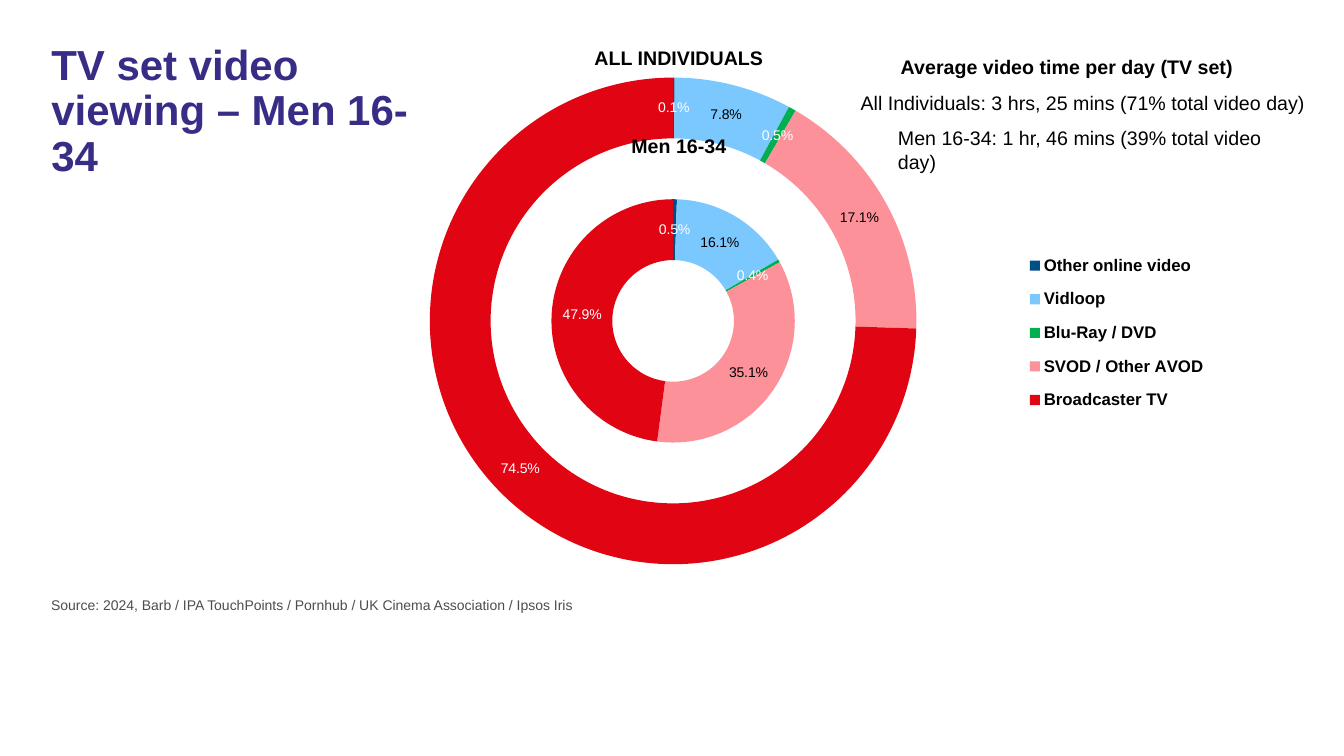
from lxml.etree import SubElement
from pptx import Presentation
from pptx.chart.data import CategoryChartData
from pptx.dml.color import RGBColor
from pptx.enum.chart import XL_CHART_TYPE as CHART, XL_LEGEND_POSITION as LEGEND
from pptx.enum.text import MSO_ANCHOR as ANCHOR, PP_ALIGN as ALIGN
from pptx.oxml.ns import qn
from pptx.util import Cm, Pt

PURPLE = RGBColor(0x37, 0x2D, 0x87)
GREY = RGBColor(0x4D, 0x4D, 0x4D)
BLACK = RGBColor(0, 0, 0)
WHITE = RGBColor(0xFF, 0xFF, 0xFF)
NAVY = RGBColor(0x00, 0x4F, 0x87)
SKY = RGBColor(0x7B, 0xC8, 0xFF)
GREEN = RGBColor(0x00, 0xB0, 0x50)
PINK = RGBColor(0xFD, 0x91, 0x99)
RED = RGBColor(0xE1, 0x05, 0x14)

FONT = "Arial"
PERCENT = "0.0%"
# Category: (fill, label colour, Men 16-34, all individuals)
VIEWING = {
    "Other online video": (NAVY, WHITE, 0.5, 0.1),
    "Vidloop": (SKY, BLACK, 16.1, 7.8),
    "Blu-Ray / DVD": (GREEN, WHITE, 0.4, 0.5),
    "SVOD / Other AVOD": (PINK, BLACK, 35.1, 17.1),
    "Broadcaster TV": (RED, WHITE, 47.9, 74.5),
}


def set_font(font, size, color, bold=False):
    font.name, font.size, font.bold = FONT, Pt(size), bold
    font.color.rgb = color


def place(shape, left, top, width, height):
    shape.left, shape.top = Cm(left), Cm(top)
    shape.width, shape.height = Cm(width), Cm(height)


def add_title(s, text):
    title = s.shapes.title
    place(title, 1.04, 0.99, 9.7, 7.01)
    tf = title.text_frame
    tf.text, tf.word_wrap, tf.vertical_anchor = text, True, ANCHOR.TOP
    p = tf.paragraphs[0]
    p.alignment, p.line_spacing = ALIGN.LEFT, 0.9
    set_font(p.font, 30, PURPLE, True)


def add_text(s, text, left, top, width, size=14, color=BLACK, bold=False, align=ALIGN.LEFT):
    tf = s.shapes.add_textbox(Cm(left), Cm(top), Cm(width), Cm(0.86)).text_frame
    tf.word_wrap = True
    p = tf.paragraphs[0]
    p.text, p.alignment = text, align
    set_font(p.font, size, color, bold)


def set_layout(parent, after, x, y, w, h, inner=False):
    """Fix the position of a chart part as fractions of the chart."""
    for old in parent.findall(qn("c:layout")):
        parent.remove(old)
    layout = parent.makeelement(qn("c:layout"), {})
    if after is None:
        parent.insert(0, layout)
    else:
        after.addnext(layout)
    manual = SubElement(layout, qn("c:manualLayout"))
    items = [("layoutTarget", "inner")] if inner else []
    items += [("xMode", "edge"), ("yMode", "edge"), ("x", x), ("y", y), ("w", w), ("h", h)]
    for tag, val in items:
        SubElement(manual, qn("c:" + tag)).set("val", str(val))


def format_ring(series):
    labels = series.data_labels
    labels.show_value, labels.show_percentage = False, True
    labels.number_format, labels.number_format_is_linked = PERCENT, False
    set_font(labels.font, 10, WHITE)
    for i, (fill, label_color, *_) in enumerate(VIEWING.values()):
        point = series.points[i]
        point.format.fill.solid()
        point.format.fill.fore_color.rgb = fill
        set_font(point.data_label.font, 10, label_color)
    for label in series._element.iter(qn("c:dLbl")):
        label.find(qn("c:showVal")).set("val", "0")
        label.find(qn("c:showPercent")).set("val", "1")
        num_fmt = label.makeelement(qn("c:numFmt"), {"formatCode": PERCENT, "sourceLinked": "0"})
        label.find(qn("c:idx")).addnext(num_fmt)


def add_viewing_chart(s):
    _, _, men, everyone = zip(*VIEWING.values())
    data = CategoryChartData()
    data.categories = list(VIEWING)
    data.add_series("Series 1", men)
    data.add_series("Series 2", [None] * len(VIEWING))  # gap between the rings
    data.add_series("Series 3", everyone)
    chart = s.shapes.add_chart(CHART.DOUGHNUT, Cm(8.15), Cm(0.36), Cm(24.38), Cm(15.44), data).chart
    set_font(chart.font, 18, BLACK)
    chart.has_title = False
    plot = chart.plots[0]
    plot.vary_by_categories = True
    plot._element.find(qn("c:holeSize")).set("val", "47")
    for ring in (plot.series[0], plot.series[2]):
        format_ring(ring)
    set_layout(plot._element.getparent(), None, 0.11, 0.095, 0.503, 0.811, inner=True)

    chart.has_legend = True
    legend = chart.legend
    legend.position, legend.include_in_layout = LEGEND.RIGHT, False
    set_font(legend.font, 12, BLACK, True)
    set_layout(legend._element, legend._element.find(qn("c:legendPos")), 0.71, 0.37, 0.22, 0.3)


def main():
    prs = Presentation()
    prs.slide_width, prs.slide_height = Cm(33.87), Cm(19.05)
    s = prs.slides.add_slide(prs.slide_layouts[5])
    add_title(s, "TV set video viewing – Men 16-34")
    add_viewing_chart(s)
    add_text(s, "Average video time per day (TV set)", 22.45, 1.27, 9.7, bold=True)
    add_text(s, "All Individuals: 3 hrs, 25 mins (71% total video day)", 21.44, 2.16, 12.42)
    add_text(s, "Men 16-34: 1 hr, 46 mins (39% total video day)", 22.38, 3.05, 10.64)
    add_text(s, "ALL INDIVIDUALS", 14.66, 1.02, 4.9, bold=True, align=ALIGN.CENTER)
    add_text(s, "Men 16-34", 15.19, 3.25, 3.84, bold=True, align=ALIGN.CENTER)
    add_text(s, "Source: 2024, Barb / IPA TouchPoints / Pornhub / UK Cinema Association / Ipsos Iris",
             1.04, 14.91, 31.5, size=10, color=GREY)
    prs.save("out.pptx")


if __name__ == "__main__":
    main()
